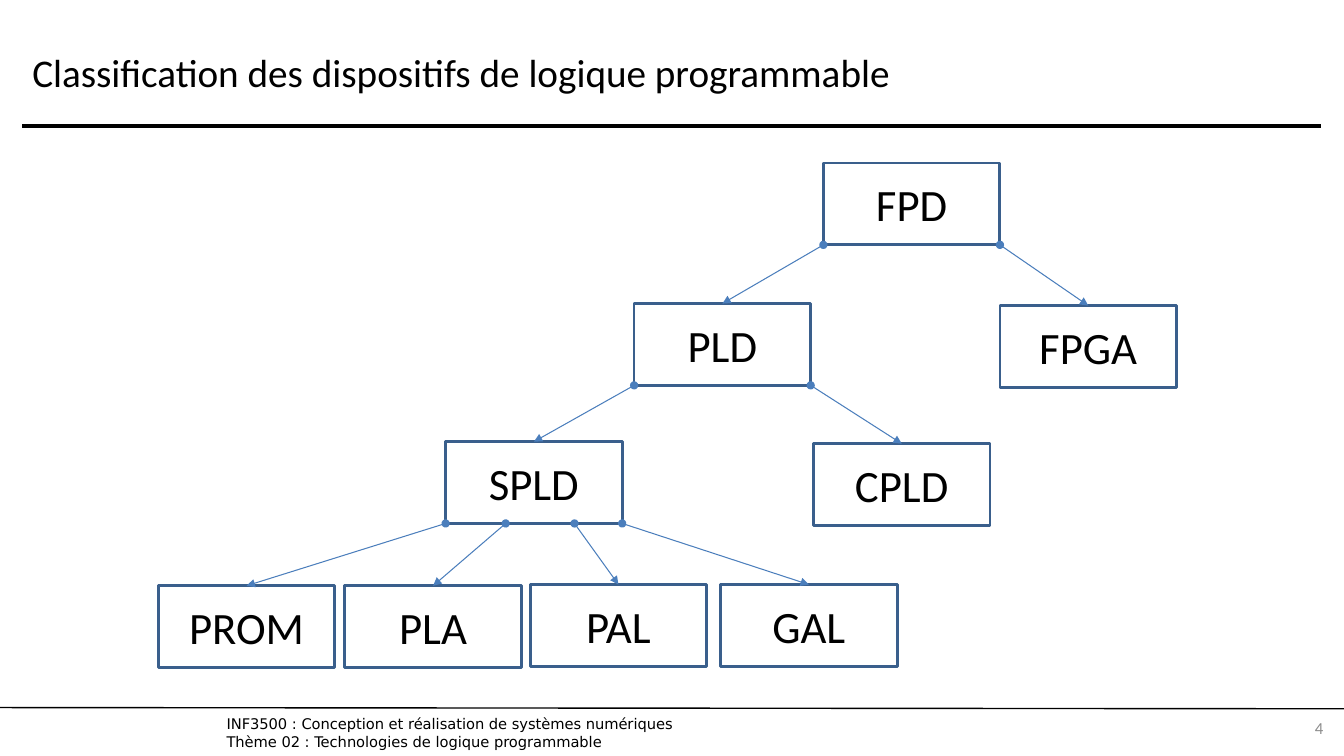
from dataclasses import dataclass

from lxml import etree
from pptx import Presentation
from pptx.dml.color import RGBColor
from pptx.enum import shapes, text
from pptx.oxml import ns
from pptx.util import Cm, Pt


@dataclass(frozen=True)
class Theme:
    ink: RGBColor = RGBColor.from_string("000000")
    grey: RGBColor = RGBColor.from_string("8C8C8C")
    border: RGBColor = RGBColor.from_string("3A5F8C")
    arrow: RGBColor = RGBColor.from_string("4B7EBC")
    font: str = "Calibri"
    footer_font: str = "DejaVu Sans"
    title_size: float = 28
    node_size: float = 32
    number_size: float = 12
    footer_size: float = 10.5


theme = Theme()


def write(box, lines, size, color=theme.ink, font=theme.font, align=text.PP_ALIGN.LEFT):
    frame = box.text_frame
    frame.word_wrap = True
    frame.vertical_anchor = text.MSO_ANCHOR.MIDDLE
    frame.text = "\n".join(lines)
    for para in frame.paragraphs:
        para.alignment = align
        para.font.size, para.font.name = Pt(size), font
        para.font.color.rgb = color


def draw_line(page, x1, y1, x2, y2, color, width):
    line = page.shapes.add_connector(shapes.MSO_CONNECTOR.STRAIGHT, x1, y1, x2, y2)
    line.line.color.rgb = color
    line.line.width = Pt(width)
    etree.SubElement(line._element.spPr, ns.qn("a:effectLst"))
    return line


deck = Presentation()
deck.slide_width, deck.slide_height = Cm(33.87), Cm(19.05)
page = deck.slides.add_slide(deck.slide_layouts[5])

# Title and rules
title = page.shapes.title
title.left, title.top, title.width, title.height = Cm(0.56), Cm(0.43), Cm(32.74), Cm(2.74)
write(title, ["Classification des dispositifs de logique programmable"], theme.title_size)
draw_line(page, Cm(0.56), Cm(3.18), Cm(33.3), Cm(3.18), theme.ink, 3)
draw_line(page, 0, Cm(17.83), deck.slide_width, Cm(17.86), theme.ink, 1)

# Footer and page number
footer = page.shapes.add_textbox(Cm(5.51), Cm(18.01), Cm(19), Cm(0.89))
frame = footer.text_frame
frame.margin_left = Cm(0.2)
frame.margin_top = frame.margin_right = frame.margin_bottom = 0
write(footer, ["INF3500 : Conception et réalisation de systèmes numériques",
               "Thème 02 : Technologies de logique programmable"],
      theme.footer_size, font=theme.footer_font)
number = page.shapes.add_textbox(Cm(31.9), Cm(17.83), Cm(1.7), Cm(1.02))
write(number, ["4"], theme.number_size, theme.grey, align=text.PP_ALIGN.RIGHT)

# Device families: left and top in cm
families = {
    "FPD": (20.75, 4.11),
    "PLD": (15.98, 7.65), "FPGA": (25.2, 7.7),
    "SPLD": (11.23, 11.13), "CPLD": (20.5, 11.18),
    "PROM": (3.99, 14.76), "PLA": (8.69, 14.76), "PAL": (13.36, 14.73), "GAL": (18.16, 14.73),
}
nodes = {}
for name, (left, top) in families.items():
    node = page.shapes.add_shape(shapes.MSO_SHAPE.RECTANGLE, Cm(left), Cm(top), Cm(4.45), Cm(2.06))
    node.shadow.inherit = False
    node.fill.background()
    node.line.color.rgb = theme.border
    node.line.width = Pt(2)
    write(node, [name], theme.node_size, align=text.PP_ALIGN.CENTER)
    nodes[name] = node

# Arrows: parent, child, start as a share of the parent's bottom edge
branches = [
    ("FPD", "PLD", 0), ("FPD", "FPGA", 1),
    ("PLD", "SPLD", 0), ("PLD", "CPLD", 1),
    ("SPLD", "PROM", 0), ("SPLD", "PLA", 0.34), ("SPLD", "PAL", 0.73), ("SPLD", "GAL", 1),
]
for parent_name, child_name, share in branches:
    parent, child = nodes[parent_name], nodes[child_name]
    arrow = draw_line(page, parent.left + int(share * parent.width), parent.top + parent.height,
                      child.left + child.width // 2, child.top, theme.arrow, 0.75)
    arrow.end_connect(child, 0)
    for end, kind in (("a:headEnd", "oval"), ("a:tailEnd", "triangle")):
        etree.SubElement(arrow.line._ln, ns.qn(end), type=kind)

deck.save("out.pptx")
